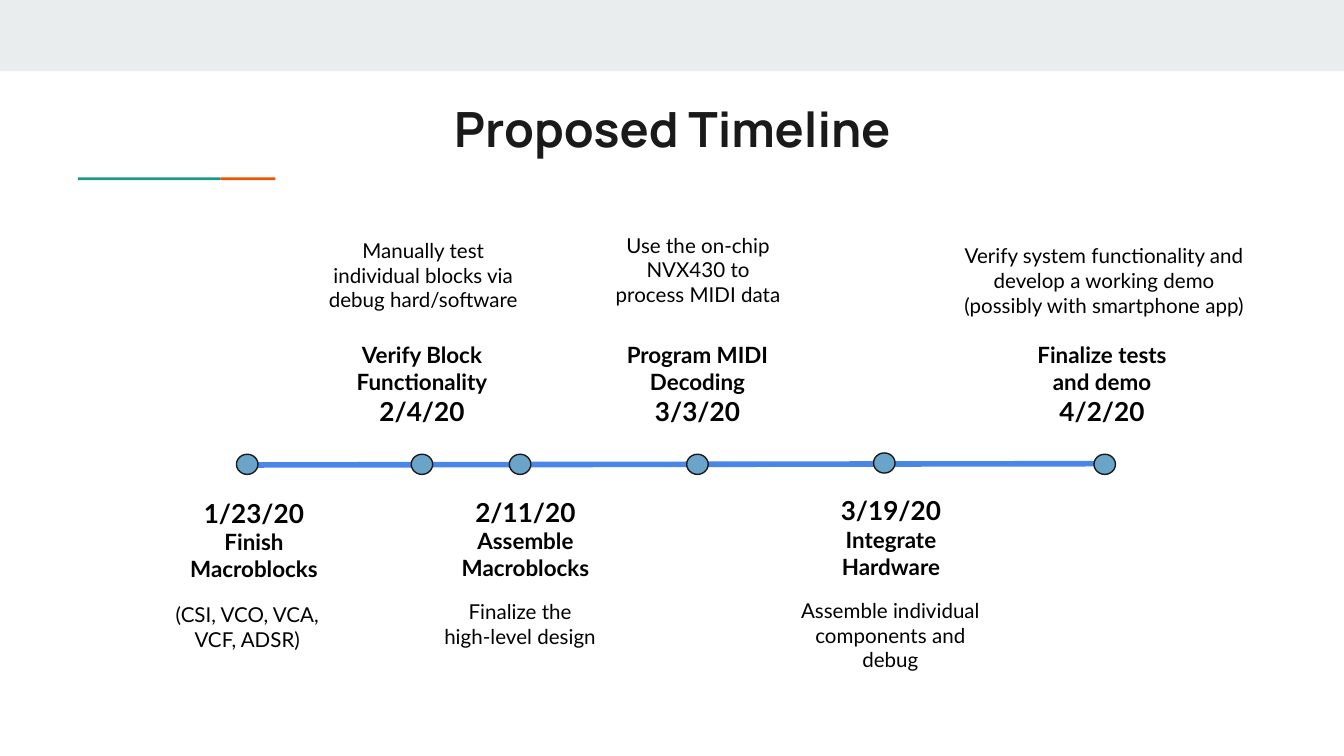
from lxml import etree
from pptx import Presentation
from pptx.dml.color import RGBColor
from pptx.enum import shapes, text
from pptx.oxml.ns import qn
from pptx.util import Inches, Pt

SLIDE_W = 10
SLIDE_H = SLIDE_W * 9 / 16
INK, BLACK = "1A1A1A", "000000"
DOT_W, DOT_H = 0.16, 0.15

# Per milestone: dot (left, top), heading box, heading lines (text, size),
# note box, note lines
MILESTONES = [
    ((1.76, 3.38), (1.27, 3.6, 1.24, 0.86),
     [("1/23/20", 14), ("Finish Macroblocks", 12)],
     (1.17, 4.38, 1.34, 0.59), ["(CSI, VCO, VCA, VCF, ADSR)"]),
    ((3.06, 3.38), (2.5, 2.44, 1.28, 0.86),
     [("Verify Block", 12), ("Functionality", 12), ("2/4/20", 14)],
     (2.3, 1.67, 1.7, 0.59),
     ["Manually test individual blocks via debug hard/software"]),
    ((3.79, 3.38), (3.29, 3.59, 1.24, 0.86),
     [("2/11/20", 14), ("Assemble Macroblocks", 12)],
     (3.2, 4.36, 1.34, 0.59), ["Finalize the high-level design"]),
    ((5.11, 3.38), (4.55, 2.44, 1.28, 0.86),
     [("Program MIDI", 12), ("Decoding", 12), ("3/3/20", 14)],
     (4.11, 1.63, 2.17, 0.59),
     ["Use the on-chip", "NVX430 to", "process MIDI data"]),
    ((6.5, 3.37), (6.01, 3.58, 1.24, 0.86),
     [("3/19/20", 14), ("Integrate Hardware", 12)],
     (5.85, 4.35, 1.55, 0.59),
     ["Assemble individual components and debug"]),
    ((8.14, 3.38), (7.56, 2.44, 1.28, 0.86),
     [("Finalize tests", 12), ("and demo", 12), ("4/2/20", 14)],
     (6.99, 1.71, 2.45, 0.59),
     ["Verify system functionality and develop a working demo "
      "(possibly with smartphone app)"]),
]


def rgb(value):
    return RGBColor.from_string(value)


def add_block(s, kind, box, fill, outline=None):
    sp = s.shapes.add_shape(kind, *map(Inches, box))
    sp.shadow.inherit = False
    sp.fill.solid()
    sp.fill.fore_color.rgb = rgb(fill)
    if outline:
        sp.line.color.rgb = rgb(outline)
        sp.line.width = Pt(0.75)
    else:
        sp.line.fill.background()
    return sp


def write(sp, lines, font, color, bold):
    """Fill a shape with centred lines given as (text, size)."""
    tf = sp.text_frame
    tf.word_wrap = True
    tf.auto_size = text.MSO_AUTO_SIZE.NONE
    tf.vertical_anchor = text.MSO_ANCHOR.TOP
    tf.margin_left = tf.margin_right = Inches(0.1)
    tf.margin_top = tf.margin_bottom = Inches(0.1)
    for i, (line, size) in enumerate(lines):
        p = tf.add_paragraph() if i else tf.paragraphs[0]
        p.alignment = text.PP_ALIGN.CENTER
        p.space_before = Pt(0)
        r = p.add_run()
        r.text = line
        r.font.name = font
        r.font.size = Pt(size)
        r.font.bold = bold
        r.font.color.rgb = rgb(color)


def add_header(s, box):
    left, top, width, height = box
    rect = shapes.MSO_SHAPE.RECTANGLE
    # Top band
    add_block(s, rect, (left, top, width, 0.53), "E9EDEE")
    # Title
    title = s.shapes.title
    title.left, title.top = Inches(left + 0.8), Inches(top + 0.64)
    title.width, title.height = Inches(8.41), Inches(0.59)
    write(title, [("Proposed Timeline", 26)], "Manrope", INK, True)
    # Two-colour rule
    rule_top = top + height - 0.02
    add_block(s, rect, (left + 0.58, rule_top, 1.06, 0.02), "1A9988")
    add_block(s, rect, (left + 1.64, rule_top, 0.41, 0.02), "EB5600")


def add_text(s, box, lines, bold):
    sp = s.shapes.add_textbox(*map(Inches, box))
    write(sp, lines, "Lato", BLACK, bold)


def add_timeline(s, start, end):
    # Axis
    axis = s.shapes.add_connector(shapes.MSO_CONNECTOR.STRAIGHT,
                                  *map(Inches, start + end))
    axis.line.color.rgb = rgb("4A86E8")
    axis.line.width = Pt(3)
    etree.SubElement(axis._element.spPr, qn("a:effectLst"))
    # Milestones
    for dot, heading_box, heading, note_box, note in MILESTONES:
        add_block(s, shapes.MSO_SHAPE.OVAL, dot + (DOT_W, DOT_H),
                  "6AA4C8", INK)
        add_text(s, heading_box, heading, True)
        add_text(s, note_box, [(line, 11) for line in note], False)


def main():
    prs = Presentation()
    prs.slide_width, prs.slide_height = Inches(SLIDE_W), Inches(SLIDE_H)
    s = prs.slides.add_slide(prs.slide_layouts[5])
    add_header(s, (0, 0, SLIDE_W, 1.34))
    add_timeline(s, (1.76, 3.46), (8.23, 3.45))
    prs.save("out.pptx")


if __name__ == "__main__":
    main()
